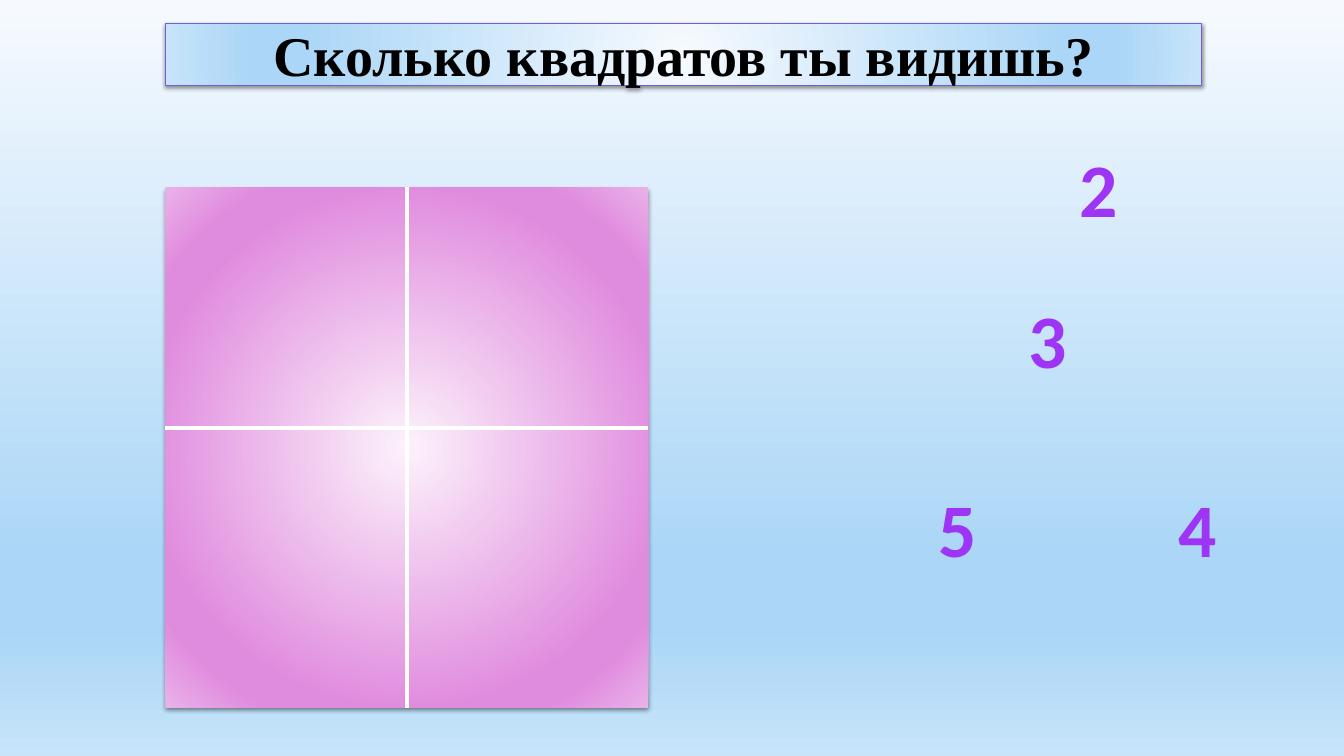
from lxml.etree import SubElement
from pptx import Presentation
from pptx.dml.color import RGBColor
from pptx.enum.shapes import MSO_CONNECTOR, MSO_SHAPE
from pptx.enum.text import MSO_ANCHOR, MSO_AUTO_SIZE, PP_ALIGN
from pptx.oxml.ns import qn
from pptx.util import Inches, Pt

COLORS = {"text": "000000", "border": "755DD9", "cross": "FFFFFF"}
# Gradient stops: percent and colour
SKY = [(0, "F6FAFE"), (74, "ABD6F7"), (83, "ABD6F7"), (100, "C7E4FA")]
PINK = [(0, "FCF2FB"), (74, "E08CDE"), (83, "E08CDE"), (100, "EAB2E9")]
VIOLET = [(25, "9E35F5"), (100, "7021B2")]


def paint(fill, element, stops, radial=False):
    """Fill with a gradient, downward or from the centre outward."""
    fill.gradient()
    gradient = next(element.iter(qn("a:gradFill")))
    gradient.clear()
    stop_list = SubElement(gradient, qn("a:gsLst"))
    for percent, color in stops:
        stop = SubElement(stop_list, qn("a:gs"), pos=str(percent * 1000))
        SubElement(stop, qn("a:srgbClr"), val=color)
    if radial:
        circle = SubElement(gradient, qn("a:path"), {"path": "circle"})
        SubElement(circle, qn("a:fillToRect"), l="50000", t="50000", r="50000", b="50000")
    else:
        SubElement(gradient, qn("a:lin"), ang="5400000", scaled="0")


def cast_shadow(shape, alpha, distance):
    """Drop a soft black shadow straight down."""
    shape.shadow.inherit = False
    effects = next(shape.element.iter(qn("a:effectLst")))
    outer = SubElement(effects, qn("a:outerShdw"), blurRad=str(Pt(3)),
                       dist=str(Pt(distance)), dir="5400000", rotWithShape="0")
    black = SubElement(outer, qn("a:srgbClr"), val="000000")
    SubElement(black, qn("a:alpha"), val=str(alpha * 1000))


# Slide with a grid of 100 columns by 100 rows
deck = Presentation()
deck.slide_width, deck.slide_height = Inches(13.33), Inches(7.5)
column, row = deck.slide_width / 100, deck.slide_height / 100
page = deck.slides.add_slide(deck.slide_layouts[5])
paint(page.background.fill, page.element, SKY)

# Title plate
title = page.shapes.title
title.left, title.top = int(12.3 * column), int(3.07 * row)
title.width, title.height = int(77.12 * column), int(8.27 * row)
outline = title.element.spPr.makeelement(qn("a:prstGeom"), prst="roundRect")
SubElement(outline, qn("a:avLst"))
title.element.spPr.insert(1, outline)
paint(title.fill, title.element, SKY, radial=True)
title.line.color.rgb = RGBColor.from_string(COLORS["border"])
title.line.width = Pt(0.79)
cast_shadow(title, 40, 1.4)
title.text_frame.auto_size = MSO_AUTO_SIZE.NONE
title.text_frame.vertical_anchor = MSO_ANCHOR.MIDDLE
para = title.text_frame.paragraphs[0]
para.alignment = PP_ALIGN.CENTER
span = para.add_run()
span.text = "Сколько квадратов ты видишь?"
span.font.name, span.font.size, span.font.bold = "Times New Roman", Pt(40), True
span.font.color.rgb = RGBColor.from_string(COLORS["text"])

# Large square
square = page.shapes.add_shape(
    MSO_SHAPE.RECTANGLE, int(12.3 * column), int(24.8 * row), int(35.93 * column), int(68.8 * row))
paint(square.fill, square.element, PINK, radial=True)
square.line.fill.background()
cast_shadow(square, 45, 2)

# Cross dividing the square
left, right = square.left, square.left + square.width
top, bottom = square.top, square.top + square.height
middle, crossing = (left + right) // 2, int(56.67 * row)
upright = page.shapes.add_connector(MSO_CONNECTOR.STRAIGHT, middle, bottom, middle, top)
upright.begin_connect(square, 2)
upright.end_connect(square, 0)
level = page.shapes.add_connector(MSO_CONNECTOR.STRAIGHT, right, crossing, left, crossing)
for divider in (upright, level):
    divider.line.color.rgb = RGBColor.from_string(COLORS["cross"])
    divider.line.width = Pt(2.75)
    SubElement(divider.element.spPr, qn("a:effectLst"))

# Answer choices: digit, left column, top row, columns wide
for digit, x, y, wide in [("2", 76.74, 18.13, 9.98), ("4", 84.4, 63.07, 9.45),
                          ("5", 64, 63.07, 14.48), ("3", 70.14, 38.13, 15.68)]:
    box = page.shapes.add_textbox(int(x * column), int(y * row), int(wide * column), int(13.47 * row))
    box.text_frame.word_wrap = True
    box.text_frame.auto_size = MSO_AUTO_SIZE.SHAPE_TO_FIT_TEXT
    para = box.text_frame.paragraphs[0]
    para.alignment = PP_ALIGN.CENTER
    span = para.add_run()
    span.text = digit
    span.font.name, span.font.size, span.font.bold = "Calibri", Pt(54), True
    paint(span.font.fill, box.element, VIOLET)
    next(box.element.iter(qn("a:rPr"))).set("spc", "50")

deck.save("out.pptx")
